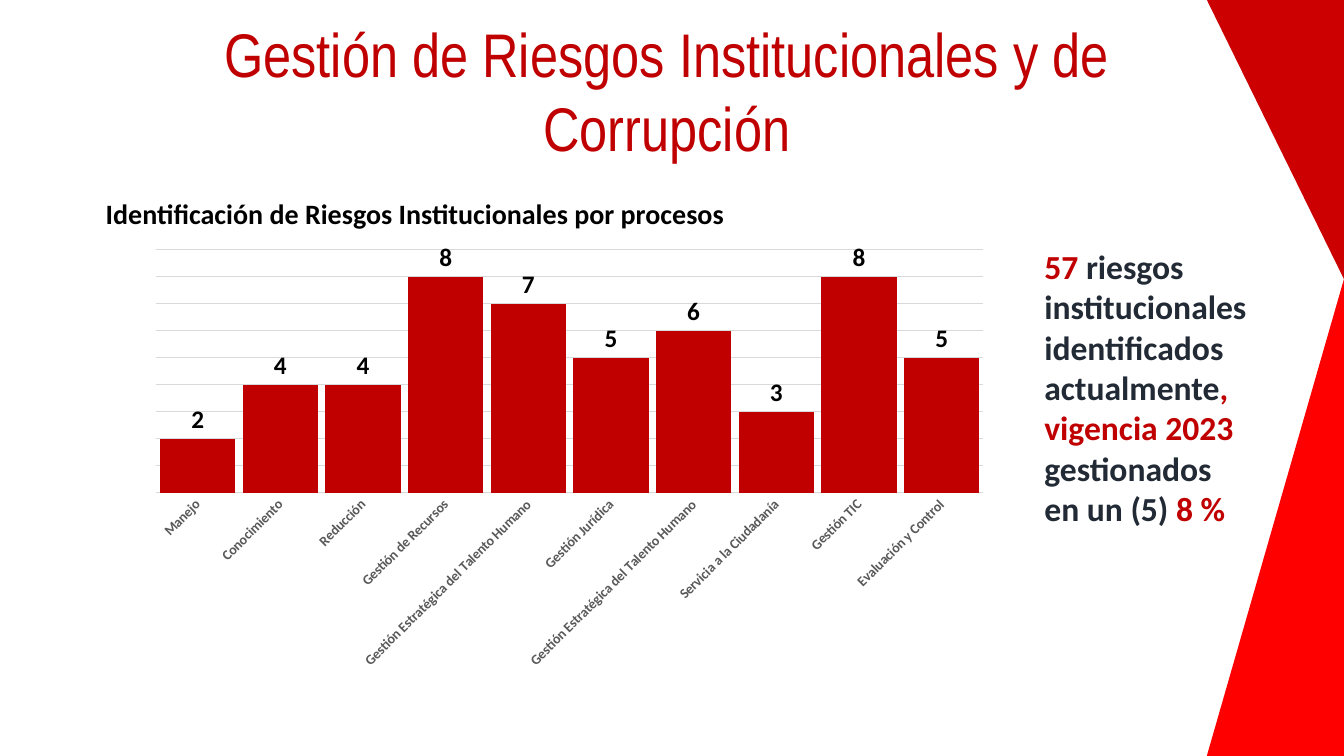
import dataclasses

import pptx
import pptx.chart.data
import pptx.dml.color
import pptx.enum.chart
import pptx.enum.shapes
import pptx.enum.text
import pptx.util


@dataclasses.dataclass(frozen=True)
class Theme:
    """Colours, fonts and type sizes of the slide."""
    accent: str = "C00000"
    corner_dark: str = "CC0000"
    corner_bright: str = "FF0000"
    ink: str = "000000"
    slate: str = "222A35"
    axis_text: str = "595959"
    rule: str = "D9D9D9"
    heading_font: str = "Arial Narrow"
    body_font: str = "Calibri"
    title_size: int = 44
    subtitle_size: int = 20
    summary_size: int = 24
    value_size: int = 18
    axis_size: int = 10
    rule_width: float = 0.75


THEME = Theme()
SLIDE_WIDTH, SLIDE_HEIGHT = 13.33, 7.5
CORNER_WIDTH, CORNER_SPLIT = 1.36, 2.77
BODY_TOP = 2.39

RISKS_BY_PROCESS = [
    ("Manejo", 2),
    ("Conocimiento", 4),
    ("Reducción", 4),
    ("Gestión de Recursos", 8),
    ("Gestión Estratégica del Talento Humano", 7),
    ("Gestión Jurídica", 5),
    ("Gestión Estratégica del Talento Humano", 6),
    ("Servicia a la Ciudadanía", 3),
    ("Gestión TIC", 8),
    ("Evaluación y Control", 5),
]

SUMMARY = [
    ("57 ", THEME.accent),
    ("riesgos institucionales identificados actualmente", THEME.slate),
    (", vigencia 2023 ", THEME.accent),
    ("gestionados en un (5) ", THEME.slate),
    ("8 %", THEME.accent),
]


def rgb(colour):
    """Return the colour object for a hex string."""
    return pptx.dml.color.RGBColor.from_string(colour)


def inches(*lengths):
    """Convert lengths in inches to slide units."""
    return [pptx.util.Inches(length) for length in lengths]


def set_font(font, size, colour, bold=False, face=THEME.body_font):
    """Apply face, size, colour and weight to a font."""
    font.name = face
    font.size = pptx.util.Pt(size)
    font.bold = bold
    font.color.rgb = rgb(colour)


def add_text(slide, box, pieces, *, size, bold=True, face=THEME.body_font, align=None):
    """Add a wrapped text box made of (wording, colour) pieces."""
    frame = slide.shapes.add_textbox(*inches(*box)).text_frame
    frame.word_wrap = True
    paragraph = frame.paragraphs[0]
    paragraph.alignment = align
    for wording, colour in pieces:
        run = paragraph.add_run()
        run.text = wording
        set_font(run.font, size, colour, bold, face)


def add_corner(slide, top, height, colour, rotation=0, mirrored=False):
    """Add a right triangle along the right edge of the slide."""
    corner = slide.shapes.add_shape(
        pptx.enum.shapes.MSO_SHAPE.RIGHT_TRIANGLE,
        *inches(SLIDE_WIDTH - CORNER_WIDTH, top, CORNER_WIDTH, height))
    corner.shadow.inherit = False
    corner.fill.solid()
    corner.fill.fore_color.rgb = rgb(colour)
    corner.line.fill.background()
    corner.rotation = rotation
    if mirrored:
        corner._element.spPr.xfrm.set("flipH", "1")


def set_rule(line):
    """Draw a chart line in the pale rule style."""
    line.color.rgb = rgb(THEME.rule)
    line.width = pptx.util.Pt(THEME.rule_width)


def style_axes(chart):
    """Show slanted process names and hide the value scale."""
    processes, counts = chart.category_axis, chart.value_axis
    processes.major_tick_mark = pptx.enum.chart.XL_TICK_MARK.NONE
    processes.has_major_gridlines = False
    set_rule(processes.format.line)
    set_font(processes.tick_labels.font, THEME.axis_size, THEME.axis_text, bold=True)
    processes._element.txPr.bodyPr.set("rot", "-2700000")
    counts.minimum_scale, counts.maximum_scale, counts.major_unit = 0, 9, 1
    counts.has_major_gridlines = True
    set_rule(counts.major_gridlines.format.line)
    counts.visible = False


def add_risk_chart(slide, box):
    """Add the column chart of risks by process."""
    processes, counts = zip(*RISKS_BY_PROCESS)
    risks = pptx.chart.data.CategoryChartData()
    risks.categories = processes
    risks.add_series("Series 1", counts)
    chart = slide.shapes.add_chart(
        pptx.enum.chart.XL_CHART_TYPE.COLUMN_CLUSTERED, *inches(*box), risks).chart
    chart.has_title = False
    chart.has_legend = False
    set_font(chart.font, THEME.axis_size, THEME.ink)
    style_axes(chart)
    columns = chart.plots[0]
    columns.vary_by_categories = False
    columns.gap_width, columns.overlap = 10, -27
    fill = columns.series[0].format.fill
    fill.solid()
    fill.fore_color.rgb = rgb(THEME.accent)
    labels = columns.series[0].data_labels
    labels.show_value = True
    labels.position = pptx.enum.chart.XL_LABEL_POSITION.OUTSIDE_END
    set_font(labels.font, THEME.value_size, THEME.ink, bold=True)


def main():
    """Build the slide and save it."""
    deck = pptx.Presentation()
    deck.slide_width, deck.slide_height = inches(SLIDE_WIDTH, SLIDE_HEIGHT)
    slide = deck.slides.add_slide(deck.slide_layouts[6])
    add_corner(slide, CORNER_SPLIT, SLIDE_HEIGHT - CORNER_SPLIT,
               THEME.corner_bright, mirrored=True)
    add_corner(slide, 0, CORNER_SPLIT, THEME.corner_dark, rotation=180)
    add_text(slide, (1.67, 0.11, 9.89, 1.58),
             [("Gestión de Riesgos Institucionales y de Corrupción", THEME.accent)],
             size=THEME.title_size, bold=False, face=THEME.heading_font,
             align=pptx.enum.text.PP_ALIGN.CENTER)
    add_text(slide, (0.95, 1.9, 6.5, 0.44),
             [("Identificación de Riesgos Institucionales por procesos", THEME.ink)],
             size=THEME.subtitle_size)
    add_text(slide, (10.26, BODY_TOP, 2.23, 2.93), SUMMARY, size=THEME.summary_size)
    add_risk_chart(slide, (1.38, BODY_TOP, 8.54, 4.33))
    deck.save("out.pptx")


if __name__ == "__main__":
    main()
